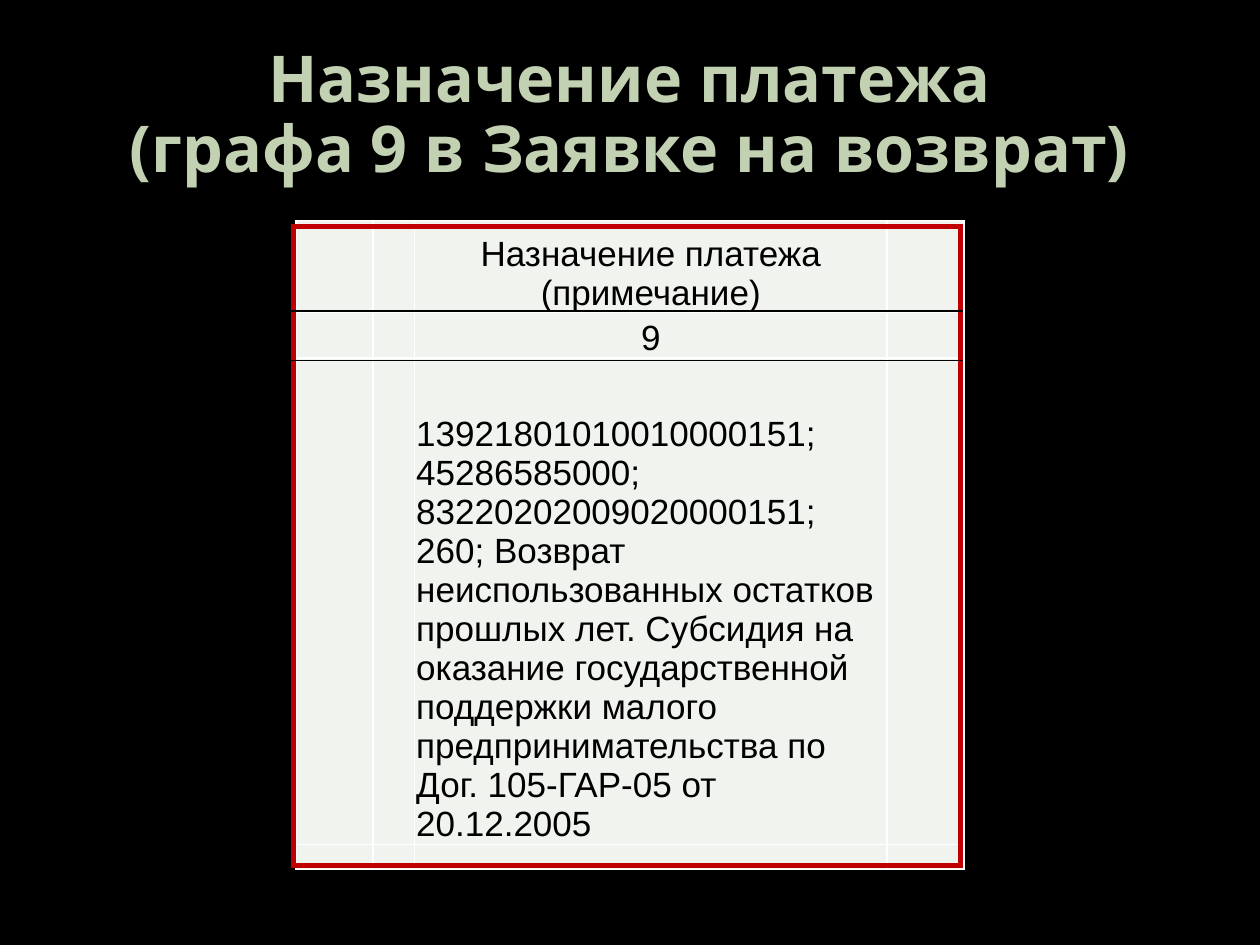
from lxml import etree
from pptx import Presentation
from pptx.dml.color import RGBColor
from pptx.enum.text import MSO_ANCHOR, PP_ALIGN
from pptx.oxml.ns import qn
from pptx.util import Cm, Pt


def rgb(value):
    return RGBColor.from_string(value)


def set_borders(cell, **sides):
    """Set cell borders; each side is a (colour, points) pair."""
    tcPr = cell._tc.get_or_add_tcPr()
    for i, side in enumerate("LRTB"):
        color, width = sides[side]
        ln = etree.Element(qn("a:ln" + side), w=str(Pt(width)))
        fill = etree.SubElement(ln, qn("a:solidFill"))
        etree.SubElement(fill, qn("a:srgbClr"), val=color)
        tcPr.insert(i, ln)


prs = Presentation()
prs.slide_width, prs.slide_height = Cm(25.4), Cm(19.05)
s = prs.slides.add_slide(prs.slide_layouts[6])
s.background.fill.solid()
s.background.fill.fore_color.rgb = rgb("000000")

# Title
tf = s.shapes.add_textbox(Cm(1.27), Cm(0.76), Cm(22.86), Cm(3.18)).text_frame
tf.word_wrap = True
tf.vertical_anchor = MSO_ANCHOR.MIDDLE
p = tf.paragraphs[0]
p.text = "Назначение платежа\v(графа 9 в Заявке на возврат)"
p.alignment = PP_ALIGN.CENTER
p.line_spacing = 0.9
for r in p.runs:
    r.font.name, r.font.size, r.font.bold = "Noto Sans", Pt(36.9), True
    r.font.color.rgb = rgb("C3D1B3")

# Both tables: position, column widths, row heights
data_grid = (5.97, 4.45), (1.55, 0.84, 9.52, 1.55), (1.85, 0.92, 9.8, 0.51)
frame_grid = (5.92, 4.57), (13.44,), (1.7, 0.99, 10.19)
tables = []
for (left, top), widths, heights in (data_grid, frame_grid):
    table = s.shapes.add_table(len(heights), len(widths), Cm(left), Cm(top),
                               Cm(sum(widths)), Cm(sum(heights))).table
    table.first_row = table.horz_banding = False
    for col, width in zip(table.columns, widths):
        col.width = Cm(width)
    for row, height in zip(table.rows, heights):
        row.height = Cm(height)
    for cell in table.iter_cells():
        cell.margin_left = cell.margin_right = cell.margin_top = Cm(0.03)
        cell.margin_bottom = 0
        cell.vertical_anchor = MSO_ANCHOR.BOTTOM
        # Small empty paragraphs keep the low rows low
        etree.SubElement(cell.text_frame.paragraphs[0]._p,
                         qn("a:endParaRPr"), sz="800")
    tables.append(table)
data, frame = tables

# Payment data
for cell in data.iter_cells():
    cell.fill.solid()
    cell.fill.fore_color.rgb = rgb("F0F3EE")
    set_borders(cell, **dict.fromkeys("LRTB", ("FFFFFF", 1)))

texts = [
    ("Назначение платежа (примечание)", PP_ALIGN.CENTER),
    ("9", PP_ALIGN.CENTER),
    ("13921801010010000151; 45286585000; 83220202009020000151; 260; "
     "Возврат неиспользованных остатков прошлых лет. Субсидия на оказание "
     "государственной поддержки малого предпринимательства по "
     "Дог. 105-ГАР-05 от 20.12.2005", PP_ALIGN.LEFT),
]
for i, (text, align) in enumerate(texts):
    p = data.cell(i, 2).text_frame.paragraphs[0]
    p.text = text
    p.alignment = align
    font = p.runs[0].font
    font.name, font.size = "Arial", Pt(20)
    font.color.rgb = rgb("000000")

# Red frame with thin black row lines
red, black = ("C00000", 3), ("000000", 0.75)
last = len(frame.rows) - 1
for i, cell in enumerate(frame.iter_cells()):
    cell.fill.background()
    set_borders(cell, L=red, R=red, T=black if i else red,
                B=red if i == last else black)

prs.save("out.pptx")
